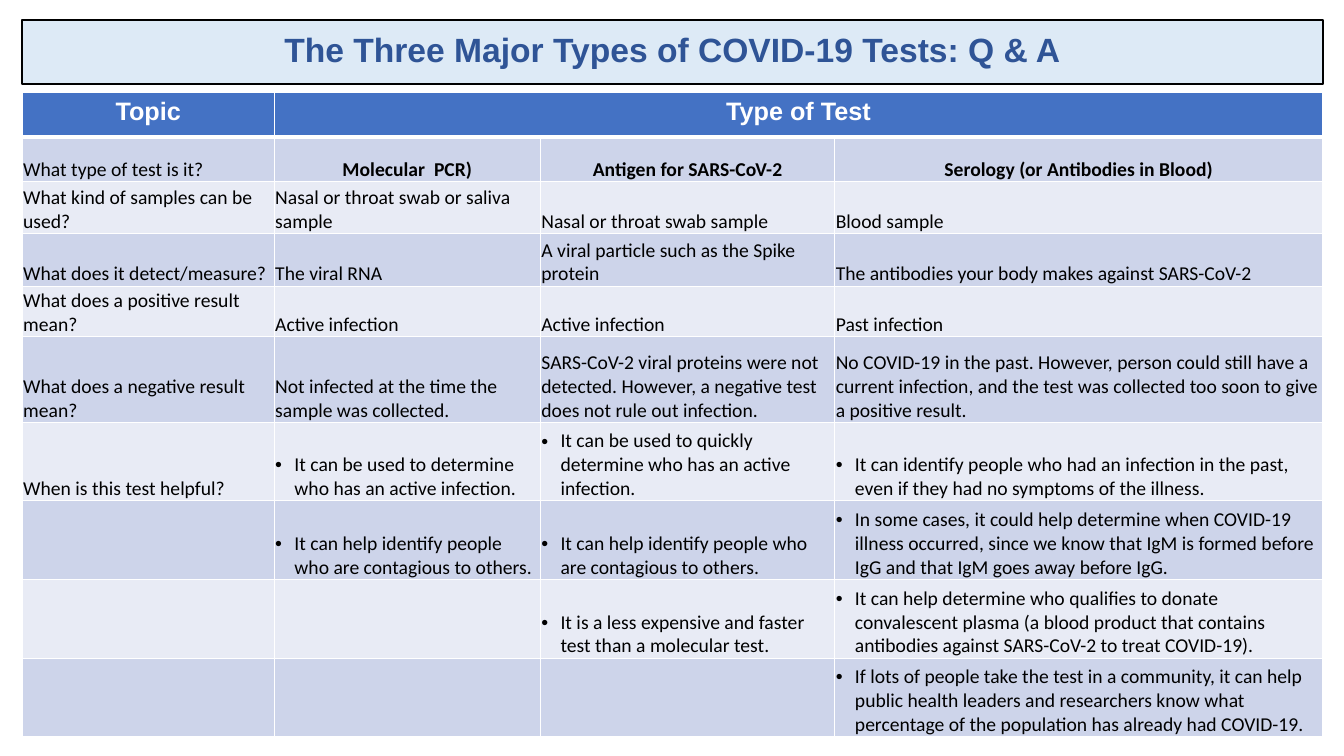
from dataclasses import dataclass

import lxml.etree
import pptx
import pptx.dml.color
import pptx.enum.shapes
import pptx.enum.text
import pptx.oxml.ns
import pptx.util

RGBColor = pptx.dml.color.RGBColor
Align = pptx.enum.text.PP_ALIGN
Anchor = pptx.enum.text.MSO_ANCHOR

PX = 9144  # 100 px to the inch

BLACK = RGBColor(0x00, 0x00, 0x00)
WHITE = RGBColor(0xFF, 0xFF, 0xFF)
TITLE_FILL = RGBColor(0xDD, 0xEA, 0xF6)
TITLE_TEXT = RGBColor(0x2F, 0x54, 0x96)
HEADER_FILL = RGBColor(0x44, 0x72, 0xC4)
BANDS = (RGBColor(0xCD, 0xD4, 0xEA), RGBColor(0xE8, 0xEB, 0xF5))

LEFT = 22
COLUMN_WIDTHS = (250, 264, 292, 484)
ROW_HEIGHTS = (44, 44, 52, 52, 50, 85, 78, 78, 78, 78)
FIRST_BULLET_ROW = 6
BULLET_INDENT = 19


@dataclass(frozen=True)
class TextStyle:
    font: str
    size: int
    color: RGBColor
    bold: bool = False
    align: Align = Align.LEFT
    bullet: bool = False


TITLE = TextStyle("Arial", 24, TITLE_TEXT, True, Align.CENTER)
HEADER = TextStyle("Arial", 18, WHITE, True, Align.CENTER)
TEST_NAME = TextStyle("Calibri", 14, BLACK, True, Align.CENTER)
BODY = TextStyle("Calibri", 14, BLACK)
BULLET = TextStyle("Calibri", 14, BLACK, bullet=True)

ROWS = (
    ("Topic", "Type of Test", "", ""),
    ("What type of test is it?", "Molecular  PCR)", "Antigen for SARS-CoV-2",
     "Serology (or Antibodies in Blood)"),
    ("What kind of samples can be used?",
     "Nasal or throat swab or saliva sample",
     "Nasal or throat swab sample", "Blood sample"),
    ("What does it detect/measure?", "The viral RNA",
     "A viral particle such as the Spike protein",
     "The antibodies your body makes against SARS-CoV-2"),
    ("What does a positive result mean?", "Active infection",
     "Active infection", "Past infection"),
    ("What does a negative result mean?",
     "Not infected at the time the sample was collected.",
     "SARS-CoV-2 viral proteins were not detected. However, a negative test "
     "does not rule out infection.",
     "No COVID-19 in the past. However, person could still have a current "
     "infection, and the test was collected too soon to give a positive result."),
    ("When is this test helpful?",
     "It can be used to determine who has an active infection.",
     "It can be used to quickly determine who has an active infection.",
     "It can identify people who had an infection in the past, even if they "
     "had no symptoms of the illness."),
    ("", "It can help identify people who are contagious to others.",
     "It can help identify people who are contagious to others.",
     "In some cases, it could help determine when COVID-19 illness occurred, "
     "since we know that IgM is formed before IgG and that IgM goes away before IgG."),
    ("", "", "It is a less expensive and faster test than a molecular test.",
     "It can help determine who qualifies to donate convalescent plasma (a blood "
     "product that contains antibodies against SARS-CoV-2 to treat COVID-19)."),
    ("", "", "",
     "If lots of people take the test in a community, it can help public health "
     "leaders and researchers know what percentage of the population has already "
     "had COVID-19."),
)


def px(length: int) -> int:
    return length * PX


def add_child(parent, tag: str, **attributes: str):
    child = lxml.etree.SubElement(parent, pptx.oxml.ns.qn(tag))
    for name, value in attributes.items():
        child.set(name, value)
    return child


def write(frame, text: str, style: TextStyle) -> None:
    para = frame.paragraphs[0]
    para.alignment = style.align
    if style.bullet:
        properties = para._p.get_or_add_pPr()
        properties.set("marL", str(px(BULLET_INDENT)))
        properties.set("indent", str(-px(BULLET_INDENT)))
        color = add_child(properties, "a:buClr")
        add_child(color, "a:srgbClr", val=str(style.color))
        add_child(properties, "a:buFont", typeface="Arial")
        add_child(properties, "a:buChar", char="•")
    span = para.add_run()
    span.text = text
    span.font.name = style.font
    span.font.size = pptx.util.Pt(style.size)
    span.font.bold = style.bold
    span.font.color.rgb = style.color


def add_borders(cell, row: int) -> None:
    thick_side = {0: "B", 1: "T"}.get(row)
    properties = cell._tc.get_or_add_tcPr()
    for side in "LRTB":
        width = pptx.util.Pt(3 if side == thick_side else 1)
        line = add_child(properties, f"a:ln{side}", w=str(int(width)))
        fill = add_child(line, "a:solidFill")
        add_child(fill, "a:srgbClr", val=str(WHITE))


def style_for(row: int, column: int) -> TextStyle:
    if row == 0:
        return HEADER
    if column == 0:
        return BODY
    if row == 1:
        return TEST_NAME
    return BULLET if row >= FIRST_BULLET_ROW else BODY


def fill_cell(cell, row: int, column: int) -> None:
    add_borders(cell, row)
    cell.fill.solid()
    cell.fill.fore_color.rgb = BANDS[(row - 1) % 2] if row else HEADER_FILL
    if row:
        cell.vertical_anchor = Anchor.BOTTOM
        cell.margin_left = cell.margin_right = cell.margin_top = px(1)
        cell.margin_bottom = 0
    if ROWS[row][column]:
        write(cell.text_frame, ROWS[row][column], style_for(row, column))


def add_title(page) -> None:
    box = page.shapes.add_shape(
        pptx.enum.shapes.MSO_SHAPE.RECTANGLE,
        px(LEFT), px(20), px(sum(COLUMN_WIDTHS)), px(63))
    box.shadow.inherit = False
    box.fill.solid()
    box.fill.fore_color.rgb = TITLE_FILL
    box.line.color.rgb = BLACK
    box.line.width = pptx.util.Pt(1.5)
    box.text_frame.word_wrap = True
    box.text_frame.vertical_anchor = Anchor.MIDDLE
    write(box.text_frame, "The Three Major Types of COVID-19 Tests: Q & A", TITLE)
    box.text_frame.paragraphs[0].line_spacing = 0.9


def add_comparison(page) -> None:
    table = page.shapes.add_table(
        len(ROWS), len(COLUMN_WIDTHS), px(LEFT), px(92),
        px(sum(COLUMN_WIDTHS)), px(sum(ROW_HEIGHTS))).table
    table.horz_banding = False
    for column, width in zip(table.columns, COLUMN_WIDTHS):
        column.width = px(width)
    for row, height in zip(table.rows, ROW_HEIGHTS):
        row.height = px(height)
    table.cell(0, 1).merge(table.cell(0, 3))
    for row in range(len(ROWS)):
        for column in range(len(COLUMN_WIDTHS)):
            fill_cell(table.cell(row, column), row, column)


def main() -> None:
    deck = pptx.Presentation()
    deck.slide_width, deck.slide_height = px(1333), px(750)
    page = deck.slides.add_slide(deck.slide_layouts[6])
    # Comparison table below the title bar
    add_comparison(page)
    add_title(page)
    deck.save("out.pptx")


if __name__ == "__main__":
    main()
